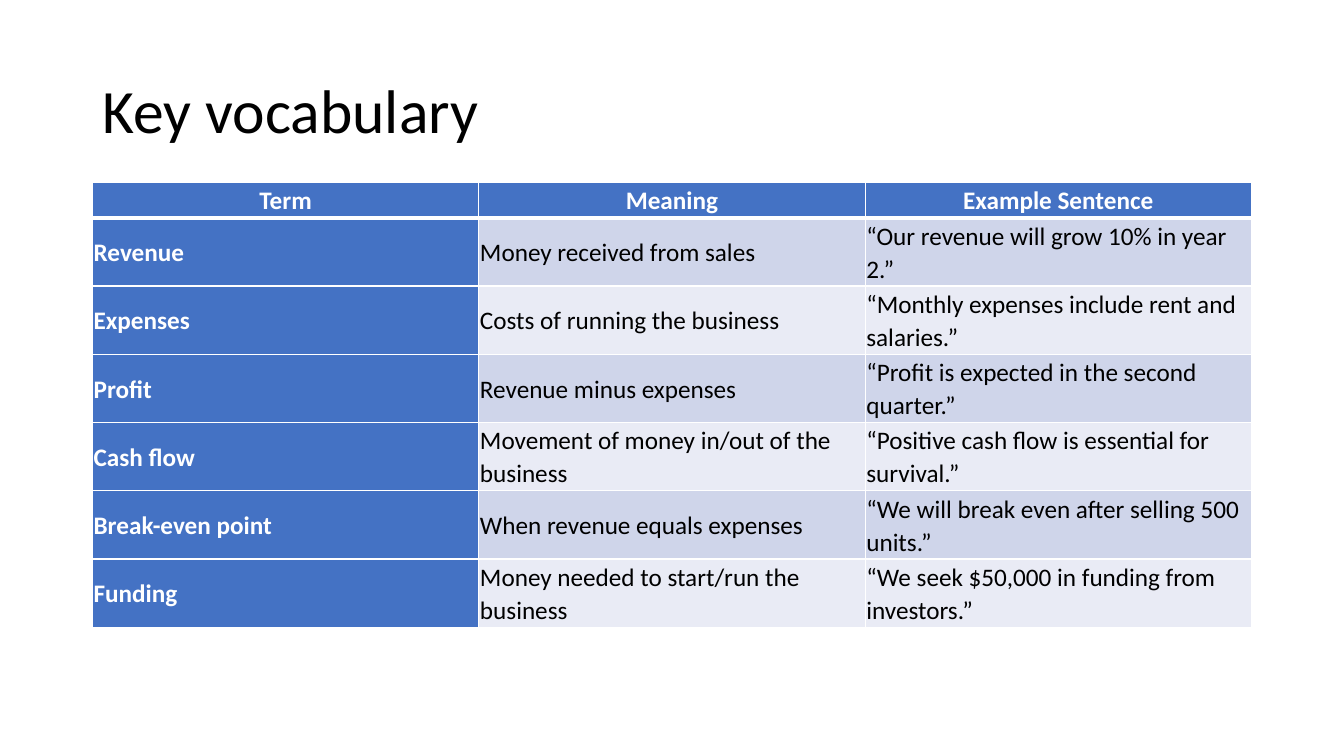
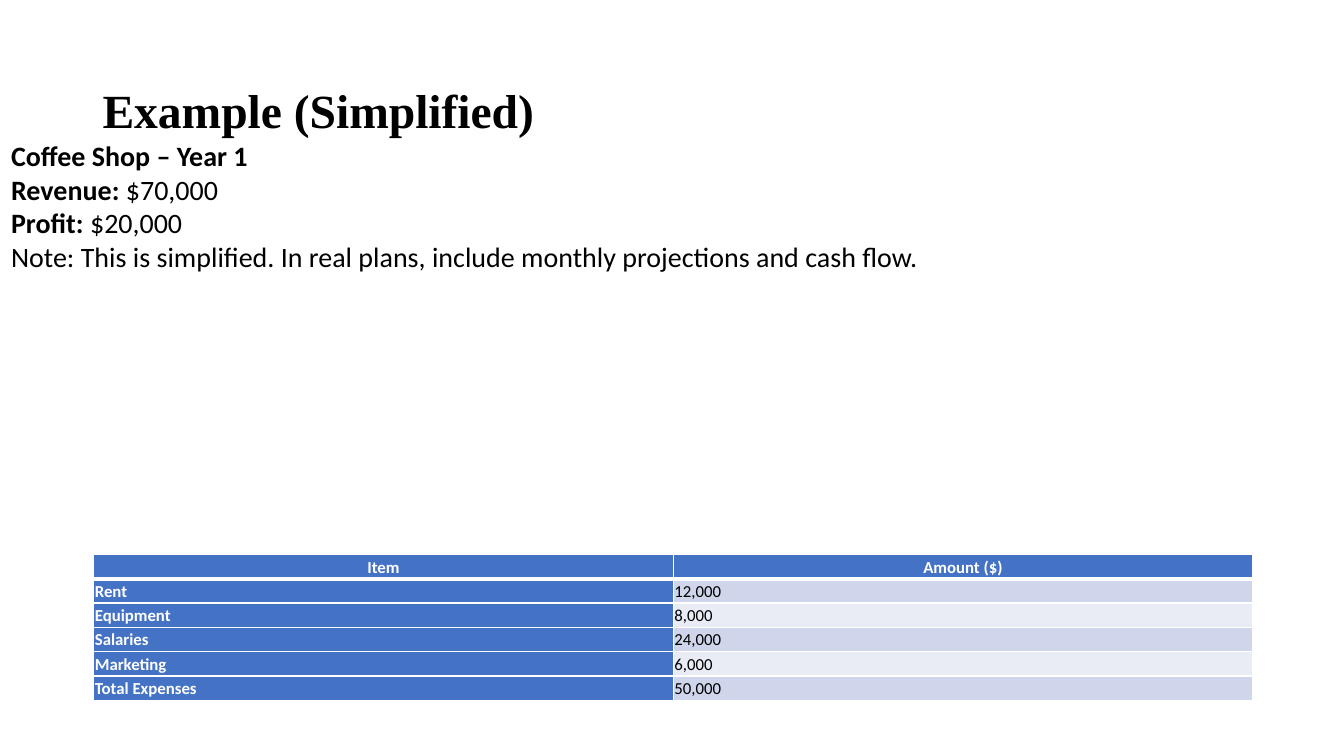
from dataclasses import dataclass

from lxml.etree import SubElement
from pptx import Presentation
from pptx.dml.color import RGBColor
from pptx.enum.text import MSO_ANCHOR as Anchor, MSO_AUTO_SIZE as AutoSize, PP_ALIGN as Align
from pptx.oxml.ns import qn
from pptx.slide import Slide
from pptx.table import _Cell as Cell
from pptx.text.text import _Paragraph as Paragraph
from pptx.util import Cm, Pt

COLOURS = {
    "text": "000000",
    "white": "FFFFFF",
    "header": "4472C4",
    "odd_row": "CFD5EA",
    "even_row": "E9EBF5",
}
BODY_FONT = "Calibri"
TITLE_ONLY = 5
CELL_INSET = Cm(0.03)
ROW_HEIGHT = Cm(0.56)
CONTENT_WIDTH = Cm(29.21)


@dataclass(frozen=True)
class Grid:
    left: float
    top: float
    size: int
    rows: list[tuple[str, ...]]


VOCABULARY = Grid(2.33, 4.6, 18, [
    ("Term", "Meaning", "Example Sentence"),
    ("Revenue", "Money received from sales", "“Our revenue will grow 10% in year 2.”"),
    ("Expenses", "Costs of running the business", "“Monthly expenses include rent and salaries.”"),
    ("Profit", "Revenue minus expenses", "“Profit is expected in the second quarter.”"),
    ("Cash flow", "Movement of money in/out of the business",
     "“Positive cash flow is essential for survival.”"),
    ("Break-even point", "When revenue equals expenses",
     "“We will break even after selling 500 units.”"),
    ("Funding", "Money needed to start/run the business",
     "“We seek $50,000 in funding from investors.”"),
])

EXPENSES = Grid(2.36, 13.97, 12, [
    ("Item", "Amount ($)"),
    ("Rent", "12,000"),
    ("Equipment", "8,000"),
    ("Salaries", "24,000"),
    ("Marketing", "6,000"),
    ("Total Expenses", "50,000"),
])

SUMMARY = [
    ("Coffee Shop – Year 1", ""),
    ("Revenue:", " $70,000"),
    ("Profit:", " $20,000"),
    ("", "Note: This is simplified. In real plans, include monthly projections and cash flow."),
]


def rgb(colour: str) -> RGBColor:
    return RGBColor.from_string(COLOURS[colour])


def write(paragraph: Paragraph, text: str, *, size: int, font: str = BODY_FONT,
          colour: str = "text", bold: bool = False, align: Align = Align.LEFT,
          line_spacing: float = 1.0, space_after: int = 0) -> None:
    paragraph.alignment = align
    paragraph.line_spacing = line_spacing
    paragraph.space_after = Pt(space_after)
    run = paragraph.add_run()
    run.text = text
    run.font.size = Pt(size)
    run.font.name = font
    run.font.bold = bold
    run.font.color.rgb = rgb(colour)


def add_titled_slide(deck: Presentation, title: str, **text_format) -> Slide:
    slide = deck.slides.add_slide(deck.slide_layouts[TITLE_ONLY])
    heading = slide.shapes.title
    heading.left, heading.top = Cm(2.33), Cm(1.01)
    heading.width, heading.height = CONTENT_WIDTH, Cm(3.68)
    heading.text_frame.vertical_anchor = Anchor.MIDDLE
    write(heading.text_frame.paragraphs[0], title, line_spacing=0.9, **text_format)
    return slide


def set_borders(cell: Cell, *, top: int, bottom: int) -> None:
    properties = cell._tc.get_or_add_tcPr()
    for side, width in {"L": 1, "R": 1, "T": top, "B": bottom}.items():
        line = SubElement(properties, qn(f"a:ln{side}"), w=str(Pt(width)))
        fill = SubElement(line, qn("a:solidFill"))
        SubElement(fill, qn("a:srgbClr"), val=COLOURS["white"])


def format_cell(cell: Cell, text: str, row: int, column: int, size: int) -> None:
    is_header = row == 0
    is_label = is_header or column == 0
    cell.margin_left = cell.margin_right = CELL_INSET
    cell.margin_top = cell.margin_bottom = CELL_INSET
    cell.vertical_anchor = Anchor.MIDDLE
    set_borders(cell, top=3 if row == 1 else 1, bottom=3 if is_header else 1)
    cell.fill.solid()
    band = "odd_row" if row % 2 else "even_row"
    cell.fill.fore_color.rgb = rgb("header" if is_label else band)
    write(cell.text_frame.paragraphs[0], text, size=size, bold=is_label,
          colour="white" if is_label else "text",
          align=Align.CENTER if is_header else Align.LEFT,
          line_spacing=1.07, space_after=8)


def add_grid(slide: Slide, grid: Grid) -> None:
    row_count, column_count = len(grid.rows), len(grid.rows[0])
    table = slide.shapes.add_table(
        row_count, column_count, Cm(grid.left), Cm(grid.top),
        CONTENT_WIDTH, ROW_HEIGHT * row_count).table
    table.first_col = True
    for row, texts in enumerate(grid.rows):
        for column, text in enumerate(texts):
            format_cell(table.cell(row, column), text, row, column, grid.size)


def add_summary(slide: Slide) -> None:
    frame = slide.shapes.add_textbox(Cm(0.03), Cm(3.35), Cm(23.6), Cm(3.68)).text_frame
    frame.word_wrap = False
    frame.auto_size = AutoSize.SHAPE_TO_FIT_TEXT
    frame.vertical_anchor = Anchor.MIDDLE
    for index, (label, detail) in enumerate(SUMMARY):
        paragraph = frame.add_paragraph() if index else frame.paragraphs[0]
        if label:
            write(paragraph, label, size=20, bold=True)
        if detail:
            write(paragraph, detail, size=20)


def main() -> None:
    deck = Presentation()
    deck.slide_width, deck.slide_height = Cm(33.87), Cm(19.05)

    vocabulary = add_titled_slide(deck, "Key vocabulary", size=44)
    add_grid(vocabulary, VOCABULARY)

    example = add_titled_slide(deck, "Example (Simplified)", size=34,
                               font="Times New Roman", bold=True)
    add_grid(example, EXPENSES)
    add_summary(example)

    deck.save("out.pptx")


if __name__ == "__main__":
    main()
